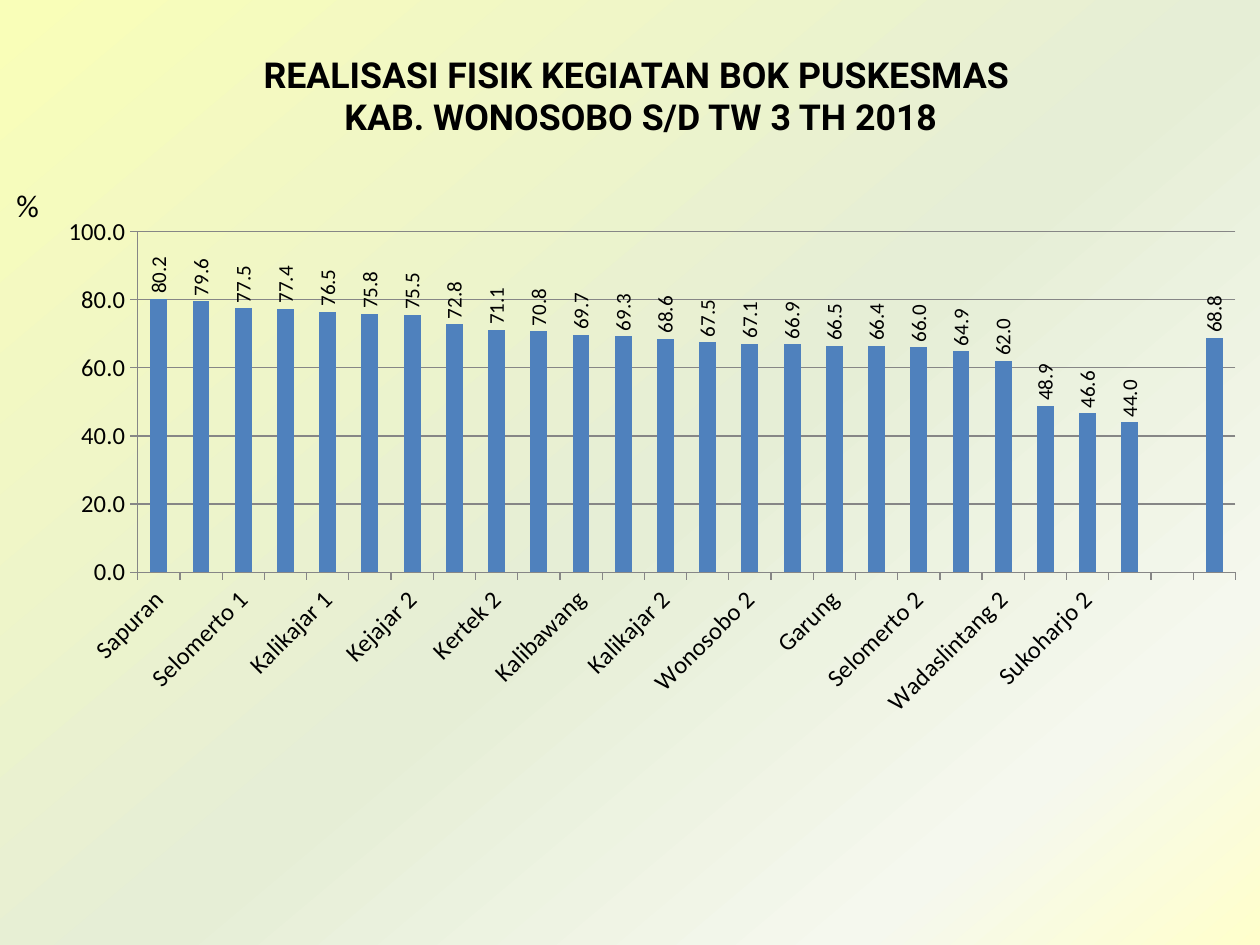
import pptx
import pptx.chart.data
import pptx.dml.color
import pptx.enum.chart
import pptx.enum.text
import pptx.oxml
import pptx.oxml.ns
import pptx.util

Pt = pptx.util.Pt
RGB = pptx.dml.color.RGBColor.from_string
ALIGN = pptx.enum.text.PP_ALIGN
ANCHOR = pptx.enum.text.MSO_ANCHOR

# Content
TITLE = ["REALISASI FISIK KEGIATAN BOK PUSKESMAS", " KAB. WONOSOBO S/D TW 3 TH 2018"]
UNIT = ["%"]
REALISATION = [
    ("Sapuran", 80.2), ("Mojotengah", 79.6), ("Selomerto 1", 77.5), ("Wonosobo 1", 77.4),
    ("Kalikajar 1", 76.5), ("Kertek 1", 75.8), ("Kejajar 2", 75.5), ("Wadaslintang 1", 72.8),
    ("Kertek 2", 71.1), ("Kejajar  1", 70.8), ("Kalibawang", 69.7), ("Kepil 2", 69.3),
    ("Kalikajar 2", 68.6), ("Leksono 1", 67.5), ("Wonosobo 2", 67.1), ("Kepil 1", 66.9),
    ("Garung", 66.5), ("Watumalang", 66.4), ("Selomerto 2", 66.0), ("Kaliwiro", 64.9),
    ("Wadaslintang 2", 62.0), ("Leksono 2", 48.9), ("Sukoharjo 2", 46.6), ("Sukoharjo 1", 44.0),
    ("", None), ("KAB.", 68.8),
]

THEME = {
    "title_font": "Roboto", "font": "Calibri",
    "text": "000000", "bar": "4F81BD", "line": "868686",
    "title": 20.4, "unit": 18, "axis": 14, "label": 12,
    "background": [(0, "F9FEB8"), (53, "E6EED6"), (83, "F5F8EE"), (100, "FFFFCC")],
    "angle": 50,
}
# Left, top, width, height in points
TITLE_BOX = (54, 31.7, 619.2, 45.4)
UNIT_BOX = (2.2, 103, 22.3, 28.8)
CHART_BOX = (23, 117.4, 697, 299.5)
PLOT = {"x": 0.08, "y": 0.05, "w": 0.9, "h": 0.65}  # shares of the chart


def style_font(font, size, name=THEME["font"], bold=False):
    font.size, font.name, font.bold = Pt(size), name, bold
    font.color.rgb = RGB(THEME["text"])


def write_text(shape, lines, *, box, size, name=THEME["font"], bold=False,
               align=ALIGN.LEFT, anchor=ANCHOR.TOP, wrap=True):
    shape.left, shape.top, shape.width, shape.height = map(Pt, box)
    tf = shape.text_frame
    tf.auto_size = pptx.enum.text.MSO_AUTO_SIZE.NONE
    tf.word_wrap, tf.vertical_anchor = wrap, anchor
    for i, line in enumerate(lines):
        p = tf.paragraphs[0] if i == 0 else tf.add_paragraph()
        p.alignment = align
        r = p.add_run()
        r.text = line
        style_font(r.font, size, name, bold)


def xml(tag, body):
    prefix = tag.split(":")[0]
    return pptx.oxml.parse_xml(f"<{tag} {pptx.oxml.ns.nsdecls(prefix)}>{body}</{tag}>")


def paint_background(s):
    s.background.fill.gradient()
    grad = s.background.fill._fill._gradFill
    for child in list(grad):
        grad.remove(child)
    stops = "".join(f'<a:gs pos="{pos * 1000}"><a:srgbClr val="{c}"/></a:gs>'
                    for pos, c in THEME["background"])
    grad.append(xml("a:gsLst", stops))
    lin = xml("a:lin", "")
    lin.set("ang", str(THEME["angle"] * 60000))
    lin.set("scaled", "0")
    grad.append(lin)


def rotate(text_owner, degrees):
    body = text_owner._element.find(".//" + pptx.oxml.ns.qn("a:bodyPr"))
    body.set("rot", str(degrees * 60000))
    body.set("vert", "horz")


def add_bars(s):
    data = pptx.chart.data.CategoryChartData(number_format="0.0")
    data.categories = [name for name, _ in REALISATION]
    data.add_series("Series 1", [value for _, value in REALISATION])
    kind = pptx.enum.chart.XL_CHART_TYPE.COLUMN_CLUSTERED
    chart = s.shapes.add_chart(kind, *map(Pt, CHART_BOX), data).chart
    chart.has_legend = chart.has_title = False
    style_font(chart.font, 10)

    # Bars and their values
    plot = chart.plots[0]
    plot.gap_width, plot.vary_by_categories = 150, False
    fill = plot.series[0].format.fill
    fill.solid()
    fill.fore_color.rgb = RGB(THEME["bar"])
    plot.has_data_labels = True
    labels = plot.data_labels
    labels.show_value = True
    labels.number_format, labels.number_format_is_linked = "0.0", False
    labels.position = pptx.enum.chart.XL_LABEL_POSITION.OUTSIDE_END
    style_font(labels.font, THEME["label"])
    rotate(labels, -90)

    # Axes
    cat, val = chart.category_axis, chart.value_axis
    val.minimum_scale, val.maximum_scale, val.major_unit = 0, 100, 20
    val.has_major_gridlines = True
    val.tick_labels.number_format = "0.0"
    val.tick_labels.number_format_is_linked = False
    for axis in (cat, val):
        axis.major_tick_mark = pptx.enum.chart.XL_TICK_MARK.OUTSIDE
        style_font(axis.tick_labels.font, THEME["axis"])
    for part in (cat, val, val.major_gridlines):
        part.format.line.color.rgb = RGB(THEME["line"])
        part.format.line.width = Pt(0.75)
    rotate(cat, -45)

    # Fixed plot area
    area = chart._chartSpace.chart.plotArea
    for old in area.findall(pptx.oxml.ns.qn("c:layout")):
        area.remove(old)
    modes = '<c:layoutTarget val="inner"/><c:xMode val="edge"/><c:yMode val="edge"/>'
    sizes = "".join(f'<c:{key} val="{share}"/>' for key, share in PLOT.items())
    area.insert(0, xml("c:layout", f"<c:manualLayout>{modes}{sizes}</c:manualLayout>"))


def main():
    prs = pptx.Presentation()
    prs.slide_width, prs.slide_height = Pt(720), Pt(540)
    s = prs.slides.add_slide(prs.slide_layouts[5])
    paint_background(s)
    write_text(s.shapes.title, TITLE, box=TITLE_BOX, size=THEME["title"],
               name=THEME["title_font"], bold=True, align=ALIGN.CENTER, anchor=ANCHOR.MIDDLE)
    unit = s.shapes.add_textbox(*map(Pt, UNIT_BOX))
    write_text(unit, UNIT, box=UNIT_BOX, size=THEME["unit"], wrap=False)
    add_bars(s)
    prs.save("out.pptx")


if __name__ == "__main__":
    main()
